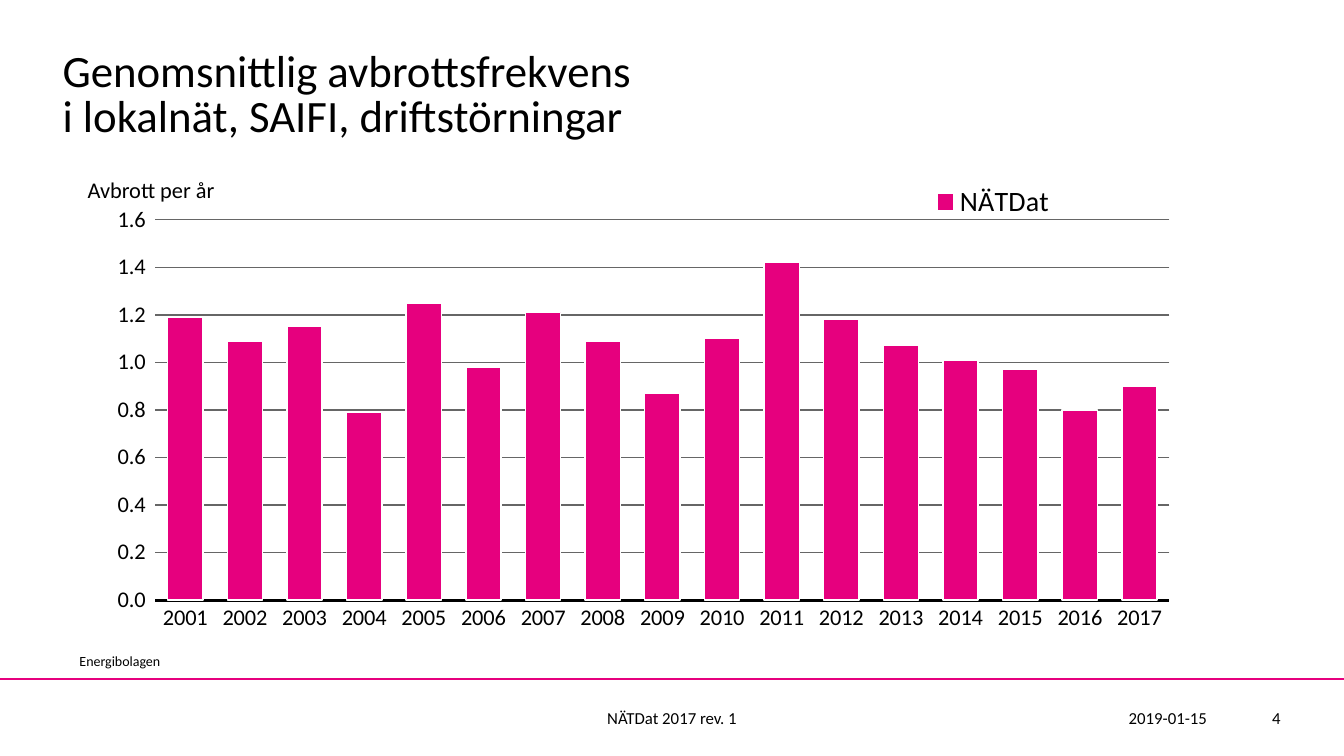
import pptx
import pptx.chart.data
import pptx.dml.color
import pptx.enum.chart
import pptx.enum.shapes
import pptx.enum.text
import pptx.oxml
import pptx.oxml.ns
import pptx.util
from dataclasses import dataclass

Inches = pptx.util.Inches
Pt = pptx.util.Pt
RGBColor = pptx.dml.color.RGBColor
Align = pptx.enum.text.PP_ALIGN
Anchor = pptx.enum.text.MSO_ANCHOR


@dataclass
class Theme:
    font: str = "Calibri"
    ink: RGBColor = RGBColor(0, 0, 0)
    accent: RGBColor = RGBColor(0xE6, 0x00, 0x7E)
    grid: RGBColor = RGBColor(0x66, 0x66, 0x66)
    white: RGBColor = RGBColor(0xFF, 0xFF, 0xFF)
    title: int = 32
    legend: int = 20
    label: int = 16
    footer: int = 12
    source: int = 10


theme = Theme()


def style_font(font, size):
    font.name = theme.font
    font.size = Pt(size)
    font.color.rgb = theme.ink


def set_layout(parent, left, top, width, height, target=""):
    old = parent.find(pptx.oxml.ns.qn("c:layout"))
    if old is not None:
        parent.remove(old)
    layout = pptx.oxml.parse_xml(
        f'<c:layout {pptx.oxml.ns.nsdecls("c")}><c:manualLayout>{target}'
        '<c:xMode val="edge"/><c:yMode val="edge"/>'
        f'<c:x val="{left}"/><c:y val="{top}"/><c:w val="{width}"/><c:h val="{height}"/>'
        "</c:manualLayout></c:layout>")
    position = 1 if parent.tag == pptx.oxml.ns.qn("c:legend") else 0
    parent.insert(position, layout)


presentation = pptx.Presentation()
presentation.slide_width = Inches(13.33)
presentation.slide_height = Inches(7.5)
slide = presentation.slides.add_slide(presentation.slide_layouts[5])

footer_line = slide.shapes.add_connector(
    pptx.enum.shapes.MSO_CONNECTOR.STRAIGHT, 0, Inches(6.74), Inches(13.33), Inches(6.74))
footer_line.line.color.rgb = theme.accent
footer_line.line.width = Pt(1.5)
footer_line._element.spPr.append(
    pptx.oxml.parse_xml(f'<a:effectLst {pptx.oxml.ns.nsdecls("a")}/>'))

title = slide.shapes.title
title.left, title.top = Inches(0.52), Inches(0.21)
title.width, title.height = Inches(12), Inches(1.25)
title.text_frame.text = "Genomsnittlig avbrottsfrekvens\vi lokalnät, SAIFI, driftstörningar"
title.text_frame.vertical_anchor = Anchor.BOTTOM
title.text_frame.auto_size = pptx.enum.text.MSO_AUTO_SIZE.NONE
title_paragraph = title.text_frame.paragraphs[0]
title_paragraph.alignment = Align.LEFT
title_paragraph.line_spacing = 0.85
style_font(title_paragraph.font, theme.title)

saifi_by_year = {
    2001: 1.19, 2002: 1.09, 2003: 1.15, 2004: 0.79, 2005: 1.25, 2006: 0.98,
    2007: 1.21, 2008: 1.09, 2009: 0.87, 2010: 1.1, 2011: 1.42, 2012: 1.18,
    2013: 1.07, 2014: 1.01, 2015: 0.97, 2016: 0.8, 2017: 0.9,
}
chart_data = pptx.chart.data.CategoryChartData()
chart_data.categories = [str(year) for year in saifi_by_year]
chart_data.add_series("NÄTDat", list(saifi_by_year.values()))
chart = slide.shapes.add_chart(
    pptx.enum.chart.XL_CHART_TYPE.COLUMN_CLUSTERED,
    Inches(0.86), Inches(1.72), Inches(12.4), Inches(4.7), chart_data).chart
chart.has_title = False
style_font(chart.font, theme.label)

plot = chart.plots[0]
plot.gap_width = 69
plot.vary_by_categories = False
series = plot.series[0]
series.format.fill.solid()
series.format.fill.fore_color.rgb = theme.accent
series.format.line.color.rgb = theme.white
series.format.line.width = Pt(1)

year_axis = chart.category_axis
year_axis.major_tick_mark = pptx.enum.chart.XL_TICK_MARK.NONE
year_axis.format.line.color.rgb = theme.ink
year_axis.format.line.width = Pt(2)
style_font(year_axis.tick_labels.font, theme.label)

value_axis = chart.value_axis
value_axis.minimum_scale = 0
value_axis.maximum_scale = 1.6
value_axis.major_unit = 0.2
value_axis.major_tick_mark = pptx.enum.chart.XL_TICK_MARK.OUTSIDE
value_axis.format.line.fill.background()
value_axis.major_gridlines.format.line.color.rgb = theme.grid
value_axis.major_gridlines.format.line.width = Pt(1)
value_axis.tick_labels.number_format = "#,##0.0"
value_axis.tick_labels.number_format_is_linked = False
style_font(value_axis.tick_labels.font, theme.label)

chart.has_legend = True
chart.legend.position = pptx.enum.chart.XL_LEGEND_POSITION.RIGHT
chart.legend.include_in_layout = False
style_font(chart.legend.font, theme.legend)
set_layout(chart.legend._element, 0.66, 0.02, 0.13, 0.08)
set_layout(chart._chartSpace.chart.plotArea, 0.055, 0.098, 0.811, 0.803,
           '<c:layoutTarget val="inner"/>')

labels = [
    ("2019-01-15", 10.5, 6.92, 1.57, 0.4, theme.footer, Align.RIGHT, Anchor.MIDDLE),
    ("NÄTDat 2017 rev. 1", 3.29, 6.92, 6.75, 0.4, theme.footer, Align.CENTER, Anchor.MIDDLE),
    ("4", 12.14, 6.92, 0.66, 0.4, theme.footer, Align.RIGHT, Anchor.MIDDLE),
    ("Energibolagen", 0.69, 6.42, 7.5, 0.2, theme.source, Align.LEFT, Anchor.TOP),
    ("Avbrott per år", 0.77, 1.7, 4, 0.37, theme.label, Align.LEFT, Anchor.TOP),
]
for text, left, top, width, height, size, alignment, anchor in labels:
    box = slide.shapes.add_textbox(Inches(left), Inches(top), Inches(width), Inches(height))
    box.text_frame.word_wrap = True
    box.text_frame.vertical_anchor = anchor
    box.text_frame.text = text
    paragraph = box.text_frame.paragraphs[0]
    paragraph.alignment = alignment
    style_font(paragraph.font, size)

presentation.save("out.pptx")
